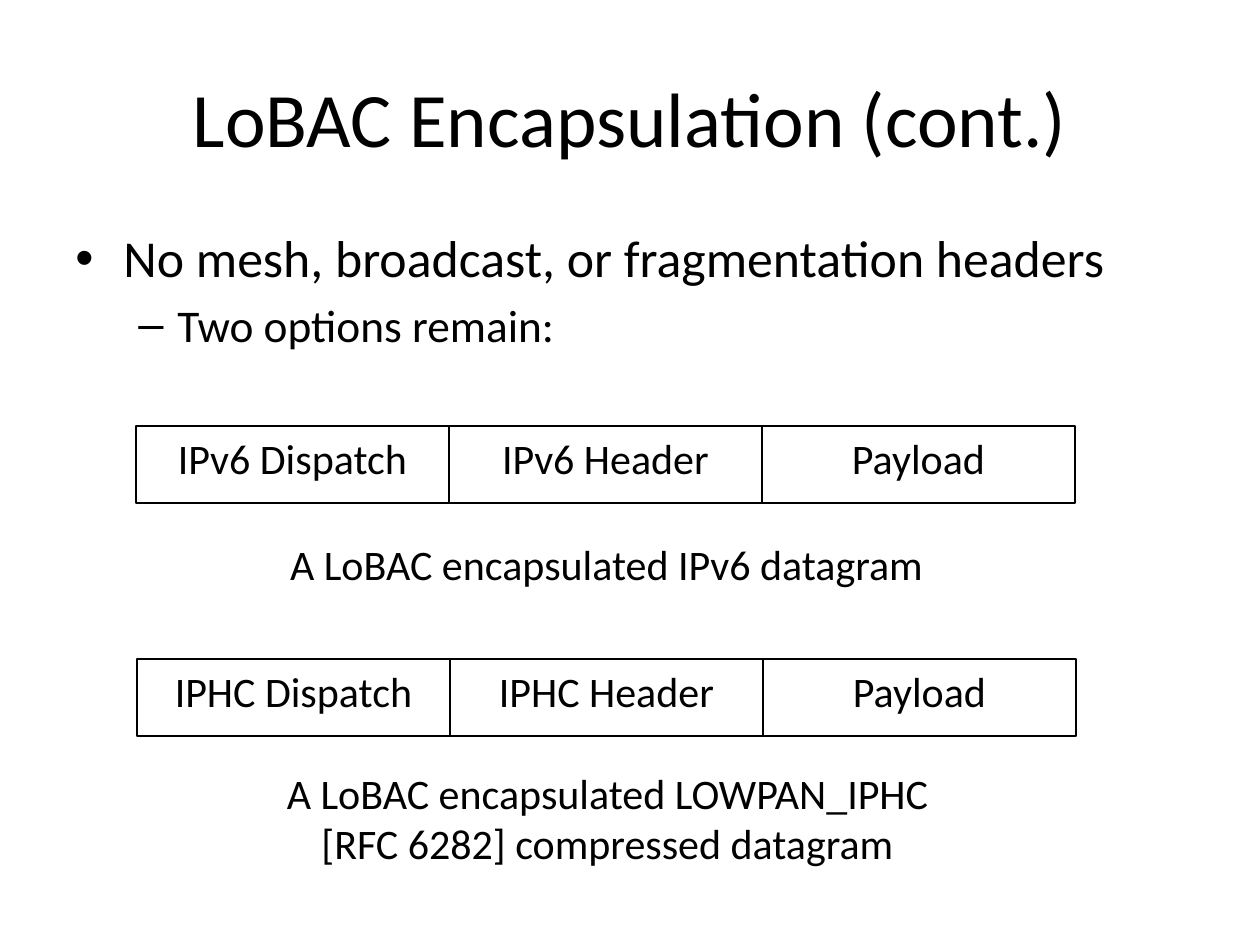
from dataclasses import dataclass

from lxml import etree
from pptx import Presentation
from pptx.dml.color import RGBColor
from pptx.enum.shapes import MSO_SHAPE
from pptx.enum.text import MSO_ANCHOR, PP_ALIGN
from pptx.oxml.ns import qn
from pptx.slide import Slide
from pptx.util import Pt

RECTANGLE = MSO_SHAPE.RECTANGLE
TOP, MIDDLE = MSO_ANCHOR.TOP, MSO_ANCHOR.MIDDLE
CENTER, LEFT = PP_ALIGN.CENTER, PP_ALIGN.LEFT
COLORS = {"ink": "000000"}
EMU_PER_PX = 914400 / 126


def px(length):
    return round(length * EMU_PER_PX)


@dataclass
class SlideWriter:
    """Holds the style and the current slide, and adds each kind of element."""

    page: Slide
    font: str = "Calibri"
    label_size: float = 24

    def color(self, name):
        return RGBColor.from_string(COLORS[name])

    def style(self, para, text, size, align):
        para.text = text
        para.alignment = align
        para.font.name = self.font
        para.font.size = Pt(size)
        para.font.color.rgb = self.color("ink")

    def text(self, left, top, width, height, lines, size, anchor=TOP):
        box = self.page.shapes.add_textbox(px(left), px(top), px(width), px(height))
        frame = box.text_frame
        frame.word_wrap = True
        frame.vertical_anchor = anchor
        for index, line in enumerate(lines):
            para = frame.paragraphs[0] if index == 0 else frame.add_paragraph()
            self.style(para, line, size, CENTER)

    def bullets(self, left, top, width, height, items):
        box = self.page.shapes.add_textbox(px(left), px(top), px(width), px(height))
        frame = box.text_frame
        frame.word_wrap = True
        for level, (text, size, mark, margin, hang) in enumerate(items):
            para = frame.paragraphs[0] if level == 0 else frame.add_paragraph()
            self.style(para, text, size, LEFT)
            para.level = level
            para.space_before = Pt(round(size * 0.2))
            props = para._p.get_or_add_pPr()
            props.set("marL", str(px(margin)))
            props.set("indent", str(-px(hang)))
            bullet_font = etree.Element(qn("a:buFont"), typeface="Arial")
            bullet = etree.Element(qn("a:buChar"), char=mark)
            spacing = props.find(qn("a:spcBef"))
            spacing.addnext(bullet_font)
            bullet_font.addnext(bullet)

    def packet(self, left, top, fields, width=313, height=77):
        for index, field in enumerate(fields):
            box = self.page.shapes.add_shape(
                RECTANGLE, px(left + index * width), px(top), px(width), px(height)
            )
            box.shadow.inherit = False
            box.fill.background()
            box.line.color.rgb = self.color("ink")
            box.line.width = Pt(1.5)
            frame = box.text_frame
            frame.margin_left = frame.margin_right = 0
            frame.vertical_anchor = TOP
            self.style(frame.paragraphs[0], field, self.label_size, CENTER)

    def caption(self, left, top, height, lines):
        self.text(left, top, 789, height, lines, self.label_size)


def main():
    deck = Presentation()
    deck.slide_width, deck.slide_height = px(1260), px(945)
    writer = SlideWriter(deck.slides.add_slide(deck.slide_layouts[6]))

    writer.text(63, 38, 1134, 157, ["LoBAC Encapsulation (cont.)"], 44, MIDDLE)
    writer.bullets(63, 220, 1134, 189, [
        ("No mesh, broadcast, or fragmentation headers", 29.6, "•", 48, 48),
        ("Two options remain:", 25.9, "–", 102, 39),
    ])
    writer.packet(136, 426, ["IPv6 Dispatch", "IPv6 Header", "Payload"])
    writer.caption(212, 532, 63, ["A LoBAC encapsulated IPv6 datagram"])
    writer.packet(137, 659, ["IPHC Dispatch", "IPHC Header", "Payload"])
    writer.caption(213, 761, 115, [
        "A LoBAC encapsulated LOWPAN_IPHC",
        "[RFC 6282] compressed datagram",
    ])
    deck.save("out.pptx")


if __name__ == "__main__":
    main()
